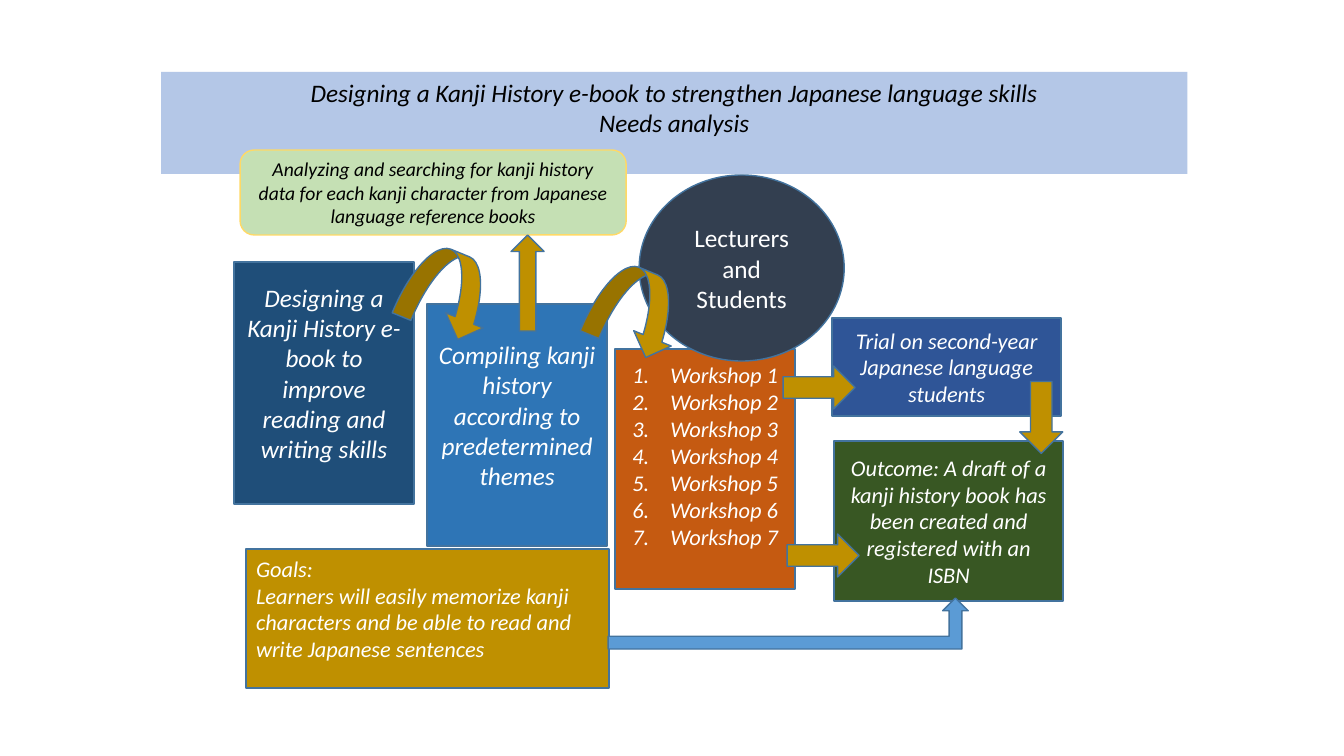
from lxml import etree
from pptx import Presentation
from pptx.dml.color import RGBColor
from pptx.enum.shapes import MSO_SHAPE
from pptx.enum.text import MSO_ANCHOR, MSO_AUTO_SIZE, PP_ALIGN
from pptx.oxml.ns import qn
from pptx.util import Emu, Inches, Pt

RECTANGLE, ROUNDED, OVAL = MSO_SHAPE.RECTANGLE, MSO_SHAPE.ROUNDED_RECTANGLE, MSO_SHAPE.OVAL
CURVED, UP = MSO_SHAPE.CURVED_DOWN_ARROW, MSO_SHAPE.UP_ARROW
RIGHT, BENT = MSO_SHAPE.RIGHT_ARROW, MSO_SHAPE.BENT_UP_ARROW
LEFT_ALIGN, CENTER = PP_ALIGN.LEFT, PP_ALIGN.CENTER
TOP, MIDDLE = MSO_ANCHOR.TOP, MSO_ANCHOR.MIDDLE

BLACK = RGBColor(0x00, 0x00, 0x00)
WHITE = RGBColor(0xFF, 0xFF, 0xFF)
OUTLINE = RGBColor(0x43, 0x73, 0x9E)
PALE_BLUE = RGBColor(0xB4, 0xC7, 0xE7)
PALE_GREEN = RGBColor(0xC5, 0xE0, 0xB4)
YELLOW = RGBColor(0xFF, 0xD9, 0x66)
NAVY = RGBColor(0x1F, 0x4E, 0x79)
BLUE = RGBColor(0x2E, 0x75, 0xB6)
ORANGE = RGBColor(0xC5, 0x5A, 0x11)
ROYAL = RGBColor(0x2F, 0x55, 0x97)
SLATE = RGBColor(0x33, 0x3F, 0x50)
GREEN = RGBColor(0x38, 0x57, 0x23)
GOLD = RGBColor(0xBF, 0x90, 0x00)
SKY = RGBColor(0x5B, 0x9B, 0xD5)

FONT = "Calibri"
PX_PER_INCH = 100.8
INSET_X, INSET_Y = 10, 5
NUMBER_INDENT = 38

# Content: places are left, top, width, height in px
TITLE_PLACE = (161, 72, 1026, 102)
TITLE_LINES = [
    "Designing a Kanji History e-book to strengthen Japanese language skills",
    "Needs analysis",
]
WORKSHOPS = [f"Workshop {number}" for number in range(1, 8)]

# kind, place, fill, lines, size, options
BOXES = [
    (ROUNDED, (240, 150, 386, 85), PALE_GREEN,
     ["Analyzing and searching for kanji history data for each kanji character "
      "from Japanese language reference books"], 14, {"color": BLACK, "line": YELLOW}),
    (RECTANGLE, (234, 262, 180, 242), NAVY,
     ["Designing a Kanji History e-book to improve reading and writing skills"],
     18, {"bottom": 25}),
    (RECTANGLE, (427, 304, 180, 242), BLUE,
     ["Compiling kanji history according to predetermined themes"], 18, {"bottom": 25}),
    (RECTANGLE, (615, 349, 180, 240), ORANGE, WORKSHOPS, 16,
     {"bottom": 32, "numbered": True}),
    (RECTANGLE, (832, 318, 229, 98), ROYAL,
     ["Trial on second-year Japanese language students"], 16, {}),
    (OVAL, (639, 175, 205, 186), SLATE, ["Lecturers and Students"], 18, {"italic": False}),
    (RECTANGLE, (834, 441, 229, 160), GREEN,
     ["Outcome: A draft of a kanji history book has been created and registered "
      "with an ISBN"], 16, {}),
    (RECTANGLE, (246, 549, 363, 139), GOLD,
     ["Goals:", "Learners will easily memorize kanji characters and be able to read "
      "and write Japanese sentences"], 16, {"bottom": 25, "align": LEFT_ALIGN}),
]

# kind, place, fill, rotation
ARROWS = [
    (CURVED, (404, 252, 91, 81), GOLD, 22.2),
    (CURVED, (592, 270, 91, 81), GOLD, 22.2),
    (UP, (511, 235, 33, 96), GOLD, 0),
    (RIGHT, (783, 366, 72, 43), GOLD, 0),
    (RIGHT, (787, 534, 72, 43), GOLD, 0),
    (RIGHT, (1005, 396, 72, 43), GOLD, 90),
    (BENT, (608, 598, 360, 51), SKY, 0),
]


def px(length):
    return Emu(round(length * Inches(1) / PX_PER_INCH))


def add_number(paragraph):
    properties = paragraph._p.get_or_add_pPr()
    properties.set("marL", str(px(NUMBER_INDENT)))
    properties.set("indent", str(-px(NUMBER_INDENT)))
    etree.SubElement(properties, qn("a:buAutoNum"), type="arabicPeriod")


def write(shape, lines, size, color=WHITE, italic=True, align=CENTER,
          anchor=MIDDLE, bottom=INSET_Y, numbered=False):
    frame = shape.text_frame
    frame.word_wrap = True
    frame.auto_size = MSO_AUTO_SIZE.NONE
    frame.vertical_anchor = anchor
    frame.margin_left = frame.margin_right = px(INSET_X)
    frame.margin_top, frame.margin_bottom = px(INSET_Y), px(bottom)
    frame.text = "\n".join(lines)
    for paragraph in frame.paragraphs:
        paragraph.alignment = align
        if numbered:
            add_number(paragraph)
        font = paragraph.font
        font.name, font.size, font.italic = FONT, Pt(size), italic
        font.color.rgb = color


def add_part(slide, kind, place, fill, line=OUTLINE):
    shape = slide.shapes.add_shape(kind, *map(px, place))
    shape.shadow.inherit = False
    shape.fill.solid()
    shape.fill.fore_color.rgb = fill
    shape.line.color.rgb = line
    shape.line.width = Pt(1)
    return shape


def main():
    presentation = Presentation()
    presentation.slide_width, presentation.slide_height = Inches(13.33), Inches(7.5)
    slide = presentation.slides.add_slide(presentation.slide_layouts[5])

    # Title band
    title = slide.shapes.title
    title.left, title.top, title.width, title.height = map(px, TITLE_PLACE)
    title.fill.solid()
    title.fill.fore_color.rgb = PALE_BLUE
    write(title, TITLE_LINES, 18, color=BLACK, anchor=TOP)

    # Stages of the project
    for kind, place, fill, lines, size, options in BOXES:
        text_options = dict(options)
        line = text_options.pop("line", OUTLINE)
        write(add_part(slide, kind, place, fill, line), lines, size, **text_options)

    # Arrows between the stages
    for kind, place, fill, rotation in ARROWS:
        add_part(slide, kind, place, fill).rotation = rotation

    presentation.save("out.pptx")


if __name__ == "__main__":
    main()
